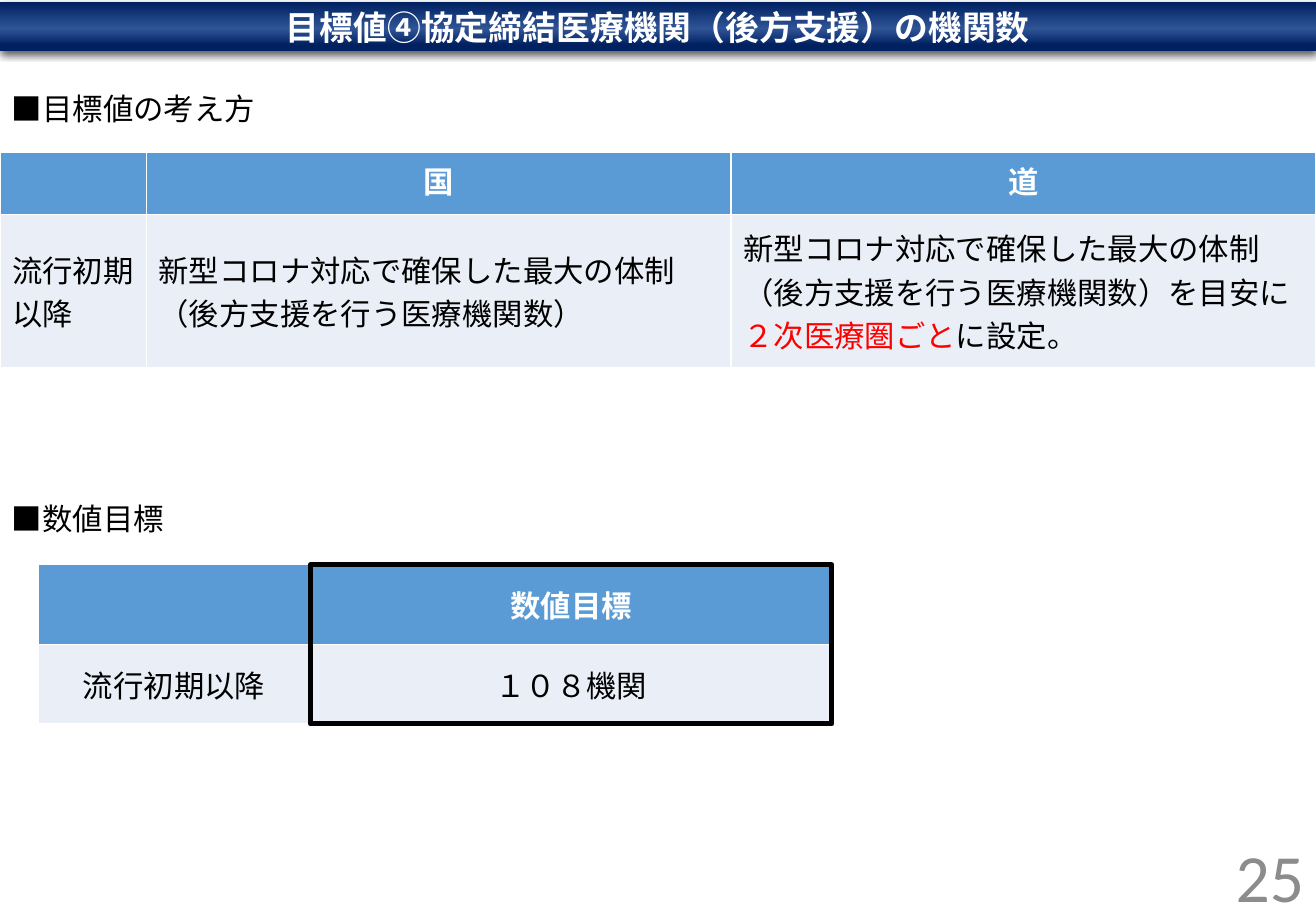
"""Build the slide on target numbers of agreement institutions for rear support."""
import pptx
import pptx.dml.color
import pptx.enum.shapes
import pptx.enum.text
import pptx.oxml.ns
import pptx.util
from copy import deepcopy
from lxml import etree

Cm = pptx.util.Cm
Pt = pptx.util.Pt
qn = pptx.oxml.ns.qn
ALIGN = pptx.enum.text.PP_ALIGN
ANCHOR = pptx.enum.text.MSO_ANCHOR
RECT = pptx.enum.shapes.MSO_SHAPE.RECTANGLE
JP_FONT = "Noto Sans CJK JP"
WIDTH, HEIGHT = 27.51, 19.05
COLORS = {
    "navy": "002060", "blue": "2F5597", "header": "5B9BD5", "body": "EAEFF7",
    "white": "FFFFFF", "black": "000000", "red": "FF0000", "gray": "8C8C8C",
}


def rgb(name):
    """Return the named colour."""
    return pptx.dml.color.RGBColor.from_string(COLORS[name])


def write(tf, paragraphs, color="black", size=18, bold=False, font=JP_FONT, align=ALIGN.LEFT):
    """Fill a text frame with paragraphs, each a list of (text, colour or None) runs."""
    for i, runs in enumerate(paragraphs):
        p = tf.paragraphs[0] if i == 0 else tf.add_paragraph()
        p.alignment = align
        for text, run_color in runs:
            r = p.add_run()
            r.text = text
            r.font.name, r.font.size, r.font.bold = font, Pt(size), bold
            r.font.color.rgb = rgb(run_color or color)
            ea = etree.SubElement(r.font._element, qn("a:ea"))
            ea.set("typeface", font)


def add_label(s, box, text, **style):
    """Place a vertically centred line of text in the box."""
    tf = s.shapes.add_textbox(*map(Cm, box)).text_frame
    tf.word_wrap = True
    tf.vertical_anchor = ANCHOR.MIDDLE
    write(tf, [[(text, None)]], **style)


def add_banner(s, box, text):
    """Draw the title bar with its gradient and soft shadow."""
    sp = s.shapes.add_shape(RECT, *map(Cm, box))
    sp.line.fill.background()
    sp.shadow.inherit = False
    sp.fill.gradient()
    grad = sp._element.spPr.find(qn("a:gradFill"))
    stops = grad.find(qn("a:gsLst"))
    stops.append(deepcopy(stops[0]))
    for stop, (pos, color) in zip(sp.fill.gradient_stops,
                                  [(0, "navy"), (0.54, "blue"), (0.88, "navy")]):
        stop.position = pos
        stop.color.rgb = rgb(color)
    grad.find(qn("a:lin")).set("ang", "5400000")
    effects = sp._element.spPr.find(qn("a:effectLst"))
    shadow = etree.SubElement(effects, qn("a:outerShdw"), blurRad=str(Pt(4.5)),
                              dist=str(Pt(1.5)), dir="5400000", rotWithShape="0")
    tint = etree.SubElement(shadow, qn("a:srgbClr"), val=COLORS["black"])
    etree.SubElement(tint, qn("a:alpha"), val="63000")
    sp.text_frame.vertical_anchor = ANCHOR.MIDDLE
    write(sp.text_frame, [[(text, None)]], "white", 20, True, align=ALIGN.CENTER)


def add_grid(s, box, first_col, first_row, rows, header_anchor, body_align):
    """Place a table in the box; the other columns and rows share the rest equally."""
    x, y, w, h = box
    n_rows, n_cols = len(rows), len(rows[0])
    table = s.shapes.add_table(n_rows, n_cols, *map(Cm, box)).table
    for i, col in enumerate(table.columns):
        col.width = Cm(first_col if i == 0 else (w - first_col) / (n_cols - 1))
    for i, row in enumerate(table.rows):
        row.height = Cm(first_row if i == 0 else (h - first_row) / (n_rows - 1))
        header = i == 0
        for cell, paragraphs in zip(row.cells, rows[i]):
            cell.fill.solid()
            cell.fill.fore_color.rgb = rgb("header" if header else "body")
            cell.vertical_anchor = header_anchor if header else ANCHOR.MIDDLE
            write(cell.text_frame, paragraphs, "white" if header else "black",
                  bold=header, align=ALIGN.CENTER if header else body_align)


def add_policy(s, box):
    """Place the heading and table that compare national and prefectural thinking."""
    x, y, w, h = box
    add_label(s, (x, y, 5.8, 1.19), "■目標値の考え方")
    rows = [
        [[], [[("国", None)]], [[("道", None)]]],
        [
            [[("流行初期以降", None)]],
            [[("新型コロナ対応で確保した最大の体制", None)],
             [("（後方支援を行う医療機関数）", None)]],
            [[("新型コロナ対応で確保した最大の体制（後方支援を行う医療機関数）を目安に", None),
              ("２次医療圏ごと", "red"), ("に設定。", None)]],
        ],
    ]
    add_grid(s, (x, y + 1.5, w, h - 1.5), 3.06, 1.3, rows, ANCHOR.TOP, ALIGN.LEFT)


def add_target(s, box):
    """Place the heading and the target table with its framed value column."""
    x, y, w, h = box
    label_col, indent, top = 5.7, 0.79, 1.35
    add_label(s, (x, y, 5.94, 0.76), "■数値目標")
    grid = (x + indent, y + top, w - indent, h - top)
    rows = [
        [[], [[("数値目標", None)]]],
        [[[("流行初期以降", None)]], [[("１０８機関", None)]]],
    ]
    add_grid(s, grid, label_col, grid[3] / 2, rows, ANCHOR.MIDDLE, ALIGN.CENTER)
    frame = (grid[0] + label_col, grid[1], grid[2] - label_col, grid[3])
    sp = s.shapes.add_shape(RECT, *map(Cm, frame))
    sp.shadow.inherit = False
    sp.fill.background()
    sp.line.color.rgb = rgb("black")
    sp.line.width = Pt(3)


def main():
    """Assemble and save the slide."""
    prs = pptx.Presentation()
    prs.slide_width, prs.slide_height = Cm(WIDTH), Cm(HEIGHT)
    s = prs.slides.add_slide(prs.slide_layouts[6])
    add_banner(s, (0, 0.05, WIDTH, 1.02), "目標値④協定締結医療機関（後方支援）の機関数")
    add_policy(s, (0, 1.68, WIDTH, 6))
    add_target(s, (0, 10.46, 17.39, 4.68))
    add_label(s, (21.33, 17.32, 6.18, 1.96), "25", color="gray", size=40,
              font="Calibri", align=ALIGN.RIGHT)
    prs.save("out.pptx")


if __name__ == "__main__":
    main()
